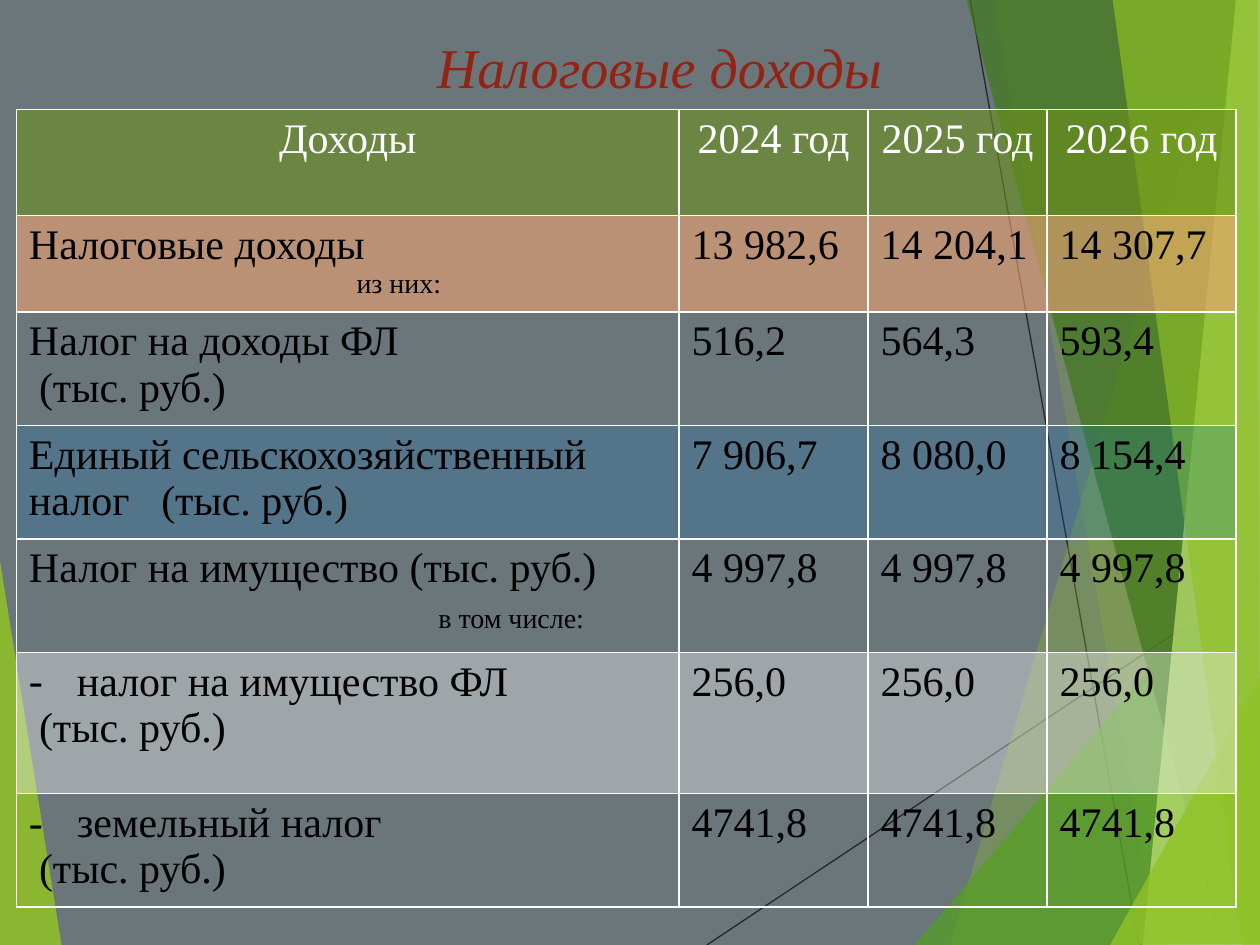
from lxml.etree import SubElement
from pptx import Presentation
from pptx.dml.color import RGBColor
from pptx.enum.shapes import MSO_CONNECTOR
from pptx.enum.text import MSO_AUTO_SIZE, PP_ALIGN
from pptx.oxml.ns import qn
from pptx.util import Inches, Pt

HUES = {
    "back": "6B767B", "line": "262626", "lime": "90C226", "green": "54A021",
    "dark": "3F7819", "pale": "C0E474", "title": "932313", "white": "FFFFFF",
    "black": "000000", "head": "6C921D", "peach": "F1A374", "blue": "0070C0",
    "light": "F3F3F3",
}
FONT = "Times New Roman"

LINES = [(5.61, 7.5, 10.01, 4.57), (7.7, 0, 9.04, 7.5)]
FACETS = [  # colour, opacity in percent, corners
    ("lime", 85, [(-0.01, 4.39), (0.49, 7.51), (-0.01, 7.5)]),
    ("lime", 30, [(9.75, 0), (7.54, 7.5), (10.02, 7.51), (10.01, 0.01)]),
    ("lime", 20, [(7.88, -0.01), (9.19, 7.5), (10.01, 7.5), (10.01, -0.01)]),
    ("green", 72, [(7.26, 7.5), (10, 4.29), (10.01, 7.5)]),
    ("dark", 70, [(7.67, -0.01), (9.7, 7.5), (10.01, 7.49), (10.01, -0.01)]),
    ("pale", 70, [(9.81, -0.01), (9.07, 7.5), (10.01, 7.5), (10, -0.01)]),
    ("lime", 65, [(8.83, -0.01), (9.86, 7.5), (10, 7.5), (9.98, -0.01)]),
    ("lime", 80, [(8.81, 7.5), (10.01, 5.35), (10.01, 7.49)]),
]

CENTER = {"align": PP_ALIGN.CENTER, "color": "white"}
UNIT = ("(тыс. руб.)", {"left": 0.08})
DASH = {"dash": 0.38}
COLS = [5.26, 1.5, 1.42, 1.5]
ROWS = [  # height, fill, label paragraphs, values, paragraph format of values
    (0.84, ("head", 59), [("Доходы", CENTER)],
     ["2024 год", "2025 год", "2026 год"], CENTER),
    (0.76, ("peach", 60),
     [("Налоговые доходы", {}), ("из них:", {"left": 2.6, "size": 16})],
     ["13 982,6", "14 204,1", "14 307,7"], {}),
    (0.9, None, [("Налог на доходы ФЛ", {}), UNIT],
     ["516,2", "564,3", "593,4"], {}),
    (0.9, ("blue", 21),
     [("Единый сельскохозяйственный налог\t(тыс. руб.)", {"tab": 1.05})],
     ["7 906,7", "8 080,0", "8 154,4"], {}),
    (0.9, None,
     [("Налог на имущество (тыс. руб.)", {}),
      ("в том числе:", {"left": 3.25, "size": 16, "before": 7})],
     ["4 997,8"] * 3, {}),
    (1.12, ("light", 39), [("налог на имущество ФЛ", DASH), UNIT],
     ["256,0"] * 3, {}),
    (0.9, None, [("земельный налог", DASH), UNIT], ["4741,8"] * 3, {}),
]


def paint(fill, hue, alpha=100):
    """Set a solid fill with an opacity in percent."""
    fill.solid()
    fill.fore_color.rgb = RGBColor.from_string(HUES[hue])
    if alpha < 100:
        color = fill._xPr.find(qn("a:solidFill"))[0]
        SubElement(color, qn("a:alpha"), val=str(alpha * 1000))


class Page:
    def __init__(self, deck):
        self.slide = deck.slides.add_slide(deck.slide_layouts[6])
        self.shapes = self.slide.shapes
        paint(self.slide.background.fill, "back")

    def line(self, group, ends):
        line = group.shapes.add_connector(
            MSO_CONNECTOR.STRAIGHT, *[Inches(n) for n in ends])
        line.line.width = Pt(0.75)
        line.line.color.rgb = RGBColor.from_string(HUES["line"])
        SubElement(line._element.spPr, qn("a:effectLst"))

    def facet(self, group, hue, alpha, corners):
        first, *rest = [(Inches(x), Inches(y)) for x, y in corners]
        pen = group.shapes.build_freeform(*first)
        pen.add_line_segments(rest, close=True)
        shape = pen.convert_to_shape()
        paint(shape.fill, hue, alpha)
        shape.line.fill.background()
        shape.shadow.inherit = False

    def text(self, frame, items):
        """Fill a text frame with (text, format) paragraphs."""
        for i, (words, style) in enumerate(items):
            para = frame.add_paragraph() if i else frame.paragraphs[0]
            run = para.add_run()
            run.text = words
            look = {"name": FONT, "size": Pt(style.get("size", 24)),
                    "bold": False, "italic": style.get("italic", False)}
            for key, value in look.items():
                setattr(run.font, key, value)
            hue = HUES[style.get("color", "black")]
            run.font.color.rgb = RGBColor.from_string(hue)
            para.alignment = style.get("align", PP_ALIGN.LEFT)
            if "before" in style:
                para.space_before = Pt(style["before"])
            props = para._p.get_or_add_pPr()
            if "left" in style:
                props.set("marL", str(Inches(style["left"])))
            if "dash" in style:
                props.set("marL", str(Inches(style["dash"])))
                props.set("indent", str(-Inches(style["dash"])))
                SubElement(props, qn("a:buFont"), typeface=FONT)
                SubElement(props, qn("a:buChar"), char="-")
            if "tab" in style:
                tabs = SubElement(props, qn("a:tabLst"))
                SubElement(tabs, qn("a:tab"), pos=str(Inches(style["tab"])), algn="l")

    def title(self, words, *box):
        frame = self.shapes.add_textbox(*[Inches(n) for n in box]).text_frame
        frame.word_wrap = True
        frame.auto_size = MSO_AUTO_SIZE.SHAPE_TO_FIT_TEXT
        self.text(frame, [(words, {"size": 32, "color": "title", "italic": True,
                                   "align": PP_ALIGN.CENTER})])

    def edge(self, cell):
        """Put white borders on a cell, ahead of its fill."""
        props = cell._tc.get_or_add_tcPr()
        for i, side in enumerate(("lnL", "lnR", "lnT", "lnB")):
            line = SubElement(props, qn("a:" + side), w=str(Pt(1)))
            solid = SubElement(line, qn("a:solidFill"))
            SubElement(solid, qn("a:srgbClr"), val=HUES["white"])
            props.insert(i, line)

    def table(self, left, top):
        high = sum(row[0] for row in ROWS)
        grid = self.shapes.add_table(
            len(ROWS), len(COLS), Inches(left), Inches(top),
            Inches(sum(COLS)), Inches(high)).table
        grid.first_row = grid.horz_banding = False
        for col, width in zip(grid.columns, COLS):
            col.width = Inches(width)
        for row, (height, tint, label, values, style) in zip(grid.rows, ROWS):
            row.height = Inches(height)
            texts = [label] + [[(value, style)] for value in values]
            for cell, items in zip(row.cells, texts):
                self.text(cell.text_frame, items)
                if tint:
                    paint(cell.fill, *tint)
                else:
                    cell.fill.background()
                self.edge(cell)


def main():
    deck = Presentation()
    deck.slide_width, deck.slide_height = Inches(10), Inches(7.5)
    page = Page(deck)
    group = page.shapes.add_group_shape()
    for ends in LINES:
        page.line(group, ends)
    for facet in FACETS:
        page.facet(group, *facet)
    page.title("Налоговые доходы", 1.06, 0.21, 8.35, 0.64)
    page.table(0.13, 0.87)
    deck.save("out.pptx")


if __name__ == "__main__":
    main()
